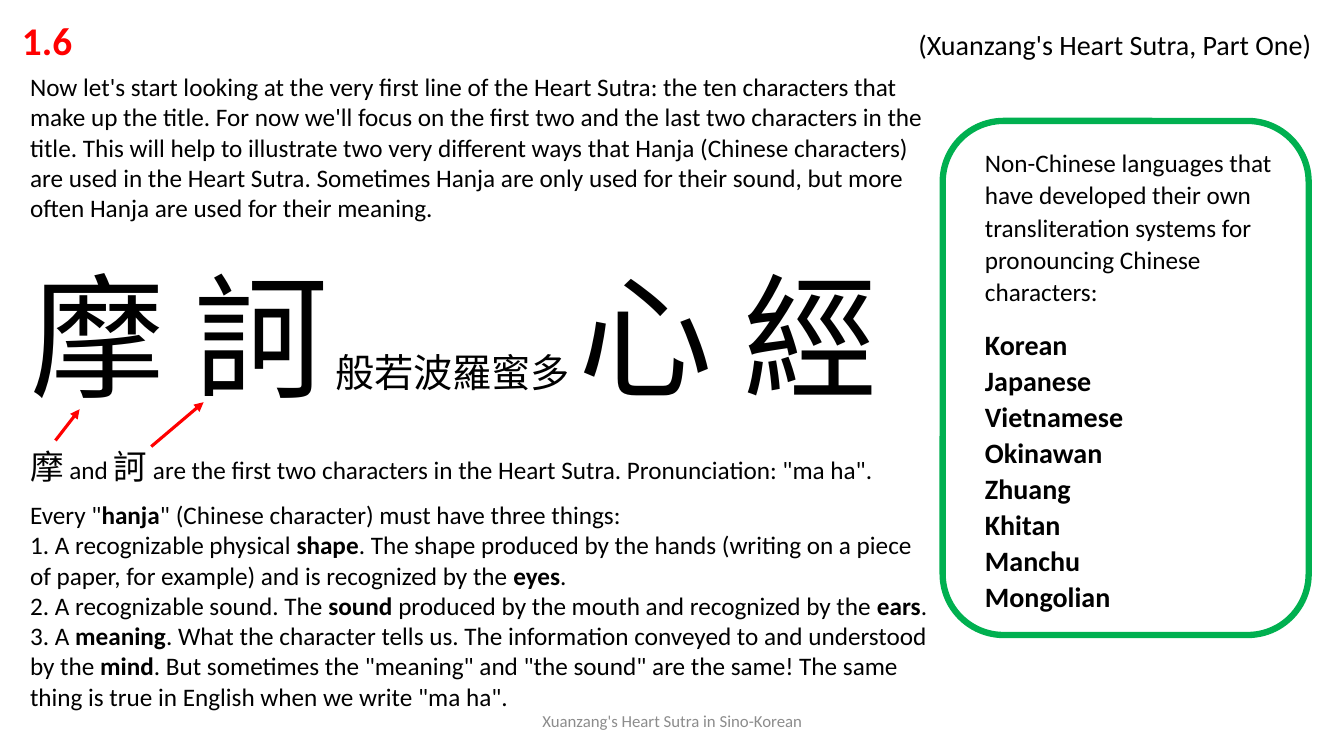
from lxml.etree import SubElement
from pptx import Presentation
from pptx.dml.color import RGBColor
from pptx.enum.shapes import MSO_CONNECTOR, MSO_SHAPE
from pptx.enum.text import MSO_ANCHOR, PP_ALIGN
from pptx.oxml.ns import qn
from pptx.util import Inches, Pt

FONT, HANJA_FONT = "Calibri", "Noto Sans CJK SC"
BLACK, RED, GREEN, GREY = "000000", "FF0000", "00B050", "8C8C8C"

HEADING, PART = "1.6", "(Xuanzang's Heart Sutra, Part One)"
FOOTER = "Xuanzang's Heart Sutra in Sino-Korean"
SIDEBAR_INTRO = ("Non-Chinese languages that have developed their own transliteration "
                 "systems for pronouncing Chinese characters:")
LANGUAGES = ["Korean", "Japanese", "Vietnamese", "Okinawan",
             "Zhuang", "Khitan", "Manchu", "Mongolian"]

INTRO = ("Now let's start looking at the very first line of the Heart Sutra: the ten "
         "characters that make up the title. For now we'll focus on the first two and "
         "the last two characters in the title. This will help to illustrate two very "
         "different ways that Hanja (Chinese characters) are used in the Heart Sutra. "
         "Sometimes Hanja are only used for their sound, but more often Hanja are used "
         "for their meaning.")
# Each paragraph: space before in points, then runs of (text, size, bold, font)
BODY = [
    (0, [(INTRO,)]),
    (22, [("摩 訶", 96), (" ",), ("般若波羅蜜多 ", 28, False, HANJA_FONT), ("心 經", 96)]),
    (22, [("摩", 24), (" and ",), ("訶", 24),
          (" are the first two characters in the Heart Sutra. "
           "Pronunciation: \"ma ha\".",)]),
    (9.8, [("Every \"",), ("hanja", 18, True),
           ("\" (Chinese character) must have three things:",)]),
    (0, [("1. A recognizable physical ",), ("shape", 18, True),
         (". The shape produced by the hands (writing on a piece of paper, for example) "
          "and is recognized by the ",), ("eyes", 18, True), (".",)]),
    (0, [("2. A recognizable sound. The ",), ("sound", 18, True),
         (" produced by the mouth and recognized by the ",), ("ears", 18, True), (".",)]),
    (0, [("3. A ",), ("meaning", 18, True),
         (". What the character tells us. The information conveyed to and understood "
          "by the ",), ("mind", 18, True),
         (". But sometimes the \"meaning\" and \"the sound\" are the same! The same thing "
          "is true in English when we write \"ma ha\".",)]),
]
ARROWS = [((0.55, 4.37), (0.79, 4.06)), ((1.5, 4.43), (2.02, 3.99))]


def rgb(value):
    return RGBColor.from_string(value)


def add_text_frame(slide, *box):
    tf = slide.shapes.add_textbox(*map(Inches, box)).text_frame
    tf.word_wrap = True
    return tf


def next_paragraph(tf, before=0, line_spacing=None):
    """Return the empty first paragraph, or a new one after the last."""
    p = tf.add_paragraph() if tf.paragraphs[0].runs else tf.paragraphs[0]
    p.space_before = Pt(before)
    p.line_spacing = line_spacing
    return p


def add_run(p, text, size=18, bold=False, font=FONT, color=BLACK):
    r = p.add_run()
    r.text = text
    r.font.size, r.font.bold, r.font.name = Pt(size), bold, font
    r.font.color.rgb = rgb(color)
    SubElement(r.font._element, qn("a:ea"), typeface=FONT)


def add_arrow(slide, start, end):
    sp = slide.shapes.add_connector(MSO_CONNECTOR.STRAIGHT, *map(Inches, start + end))
    sp.line.color.rgb = rgb(RED)
    sp.line.width = Pt(2.25)
    SubElement(sp.line._get_or_add_ln(), qn("a:tailEnd"), type="triangle")
    SubElement(sp._element.spPr, qn("a:effectLst"))


prs = Presentation()
prs.slide_width, prs.slide_height = Inches(13.33), Inches(7.5)
slide = prs.slides.add_slide(prs.slide_layouts[6])

# Heading, with the part name on a right-aligned tab stop
p = next_paragraph(add_text_frame(slide, 0.12, 0.08, 13.04, 0.58), line_spacing=1.07)
tabs = SubElement(p._p.get_or_add_pPr(), qn("a:tabLst"))
SubElement(tabs, qn("a:tab"), pos=str(Inches(12.79)), algn="r")
add_run(p, HEADING, 28, True, color=RED)
add_run(p, "\t" + PART, 20)

# Sidebar
tf = add_text_frame(slide, 9.67, 1.39, 3.12, 4.91)
add_run(next_paragraph(tf, line_spacing=1.07), SIDEBAR_INTRO)
for i, language in enumerate(LANGUAGES):
    add_run(next_paragraph(tf, 0 if i else 13, 1.07), language, 20, True)

frame = slide.shapes.add_shape(MSO_SHAPE.ROUNDED_RECTANGLE,
                               *map(Inches, (9.35, 1.2, 3.63, 5.1)))
frame.shadow.inherit = False
frame.fill.background()
frame.line.color.rgb = rgb(GREEN)
frame.line.width = Pt(4.5)

# Main text
tf = add_text_frame(slide, 0.2, 0.66, 9.17, 6.5)
for before, runs in BODY:
    p = next_paragraph(tf, before)
    for run in runs:
        add_run(p, *run)

tf = add_text_frame(slide, 4.42, 6.95, 4.5, 0.4)
tf.vertical_anchor = MSO_ANCHOR.MIDDLE
p = next_paragraph(tf)
p.alignment = PP_ALIGN.CENTER
add_run(p, FOOTER, 12, color=GREY)

for start, end in ARROWS:
    add_arrow(slide, start, end)

prs.save("out.pptx")
